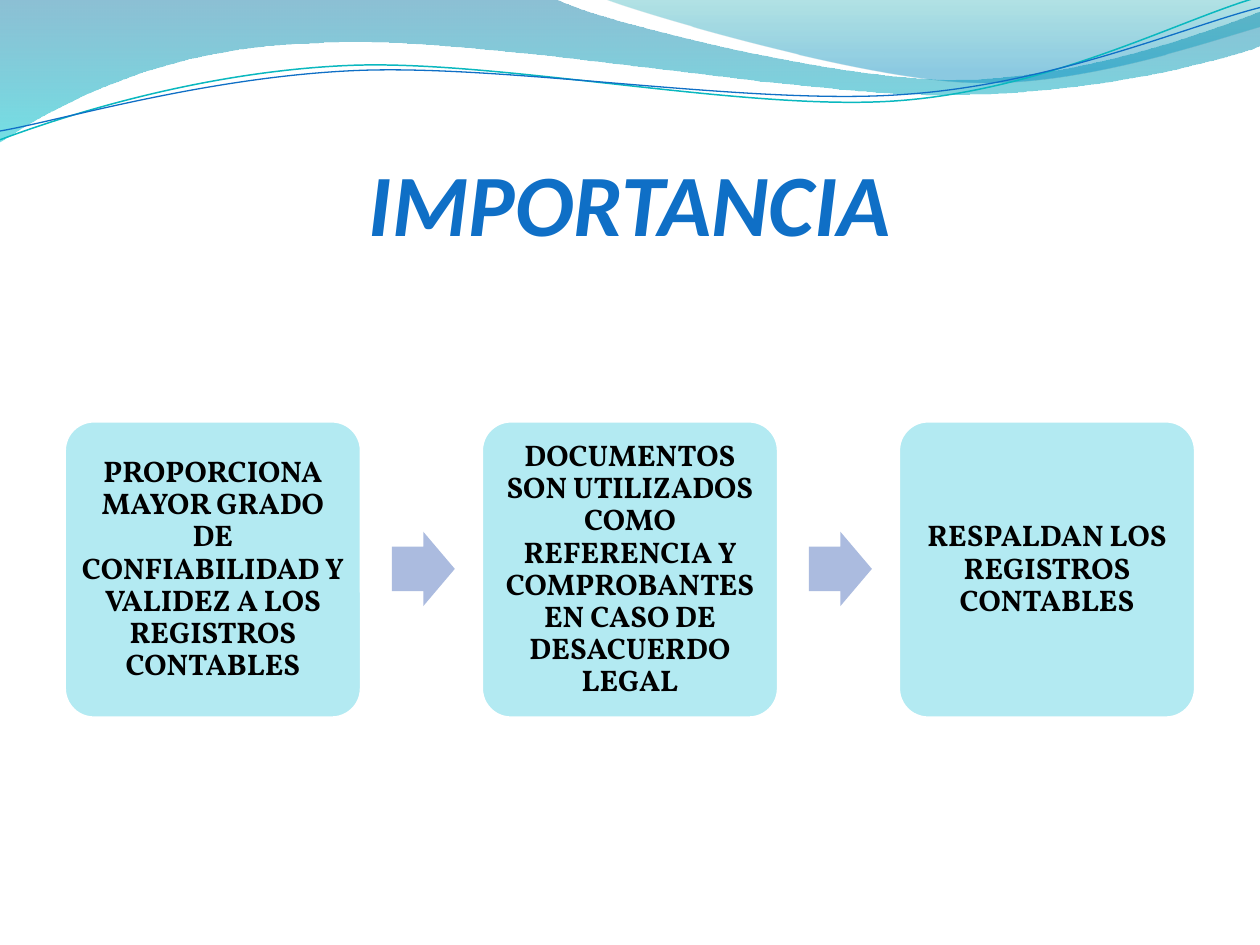
"""Build the "IMPORTANCIA" slide: a wave header and a three-step process."""
from lxml.etree import SubElement
from pptx import Presentation
from pptx.dml.color import RGBColor
from pptx.enum.shapes import MSO_SHAPE as SHAPE
from pptx.enum.text import MSO_ANCHOR as ANCHOR, MSO_AUTO_SIZE as AUTO, PP_ALIGN as ALIGN
from pptx.oxml.ns import qn
from pptx.util import Inches, Pt

BLUE = RGBColor(0x0F, 0x6F, 0xC6)
TEAL = RGBColor(0x0A, 0xB8, 0xBF)
DEEP_BLUE = RGBColor(0x00, 0x74, 0xA1)
CYAN = RGBColor(0x00, 0xC6, 0xCF)
SEA = RGBColor(0x00, 0xA1, 0xA9)
SKY = RGBColor(0x00, 0x8B, 0xBF)
BOX = RGBColor(0xB3, 0xEA, 0xF2)
ARROW = RGBColor(0xAB, 0xBB, 0xDF)
WHITE = RGBColor(0xFF, 0xFF, 0xFF)
BLACK = RGBColor(0x00, 0x00, 0x00)


def add_wave(shapes, start, segments, closed):
    """Draw a freeform from line (2 numbers) and Bezier (6 numbers) segments."""
    points = [(Inches(seg[k]), Inches(seg[k + 1])) for seg in segments for k in range(0, len(seg), 2)]
    builder = shapes.build_freeform(Inches(start[0]), Inches(start[1]))
    builder.add_line_segments(points, close=closed)
    sp = builder.convert_to_shape()
    sp.shadow.inherit = False
    lines = iter(list(sp._element.spPr.iter(qn("a:lnTo"))))
    for seg in segments:
        first = next(lines)
        if len(seg) == 6:
            curve = SubElement(first.getparent(), qn("a:cubicBezTo"))
            first.addprevious(curve)
            for line in (first, next(lines), next(lines)):
                curve.append(line[0])
                line.getparent().remove(line)
    return sp


prs = Presentation()
prs.slide_width, prs.slide_height = Inches(10), Inches(7.5)
s = prs.slides.add_slide(prs.slide_layouts[5])

bands = [
    ((0, 0),
     [(4.4, -0.01), (4.76, 0.17, 6.64, 0.63, 7.58, 0.63), (8.53, 0.63, 9.58, 0.26, 10, 0.09),
      (10.01, 0.36), (9.83, 0.44, 8.7, 0.76, 7.46, 0.75), (6.22, 0.75, 3.82, 0.28, 2.57, 0.34),
      (1.29, 0.36, 0.46, 0.83, -0.01, 1.13)],
     [(0, DEEP_BLUE, 45), (1, CYAN, 55)]),
    ((4.79, -0.01),
     [(5.09, 0.11, 6.82, 0.62, 7.69, 0.65), (8.56, 0.69, 9.61, 0.32, 10, 0.21), (10, 0)],
     [(0, SEA, 30), (0.8, SKY, 45)]),
]
for start, segments, stops in bands:
    sp = add_wave(s.shapes, start, segments, True)
    sp.line.fill.background()
    sp.fill.gradient()
    sp.fill.gradient_angle = 270
    for stop, (position, color, _) in zip(sp.fill.gradient_stops, stops):
        stop.position = position
        stop.color.rgb = color
    for clr, (_, _, opacity) in zip(sp._element.spPr.iter(qn("a:srgbClr")), stops):
        SubElement(clr, qn("a:alpha")).set("val", str(opacity * 1000))

strands = [
    ((0, 1.11), [(0.48, 0.93, 1.58, 0.57, 2.77, 0.52), (3.95, 0.47, 5.93, 0.89, 7.13, 0.8),
                 (8.33, 0.71, 9.38, 0.15, 9.98, -0.02)], TEAL, 0.85),
    ((0, 1.04), [(0.47, 0.96, 1.64, 0.61, 2.83, 0.56), (4.03, 0.51, 5.97, 0.84, 7.17, 0.75),
                 (8.36, 0.67, 9.41, 0.21, 10, 0.06)], BLUE, 0.75),
]
for start, segments, color, width in strands:
    sp = add_wave(s.shapes, start, segments, False)
    sp.fill.background()
    sp.line.color.rgb = color
    sp.line.width = Pt(width)

title = s.shapes.title
title.left, title.top, title.width, title.height = map(Inches, (0.5, 0.77, 9, 1.25))
tf = title.text_frame
tf.text = "IMPORTANCIA"
tf.auto_size = AUTO.NONE
tf.vertical_anchor = ANCHOR.BOTTOM
tf.margin_left = tf.margin_right = tf.margin_bottom = 0
tf.margin_top = Inches(0.05)
p = tf.paragraphs[0]
p.alignment = ALIGN.CENTER
p.font.name, p.font.size = "Calibri", Pt(50)
p.font.bold = p.font.italic = True
p.font.color.rgb = BLUE

steps = [
    "PROPORCIONA MAYOR GRADO DE CONFIABILIDAD Y VALIDEZ A LOS REGISTROS CONTABLES",
    "DOCUMENTOS SON UTILIZADOS COMO REFERENCIA Y COMPROBANTES EN CASO DE DESACUERDO LEGAL",
    "RESPALDAN LOS REGISTROS CONTABLES",
]
left, top, size, pitch = 0.51, 3.34, 2.36, 3.31
for i, text in enumerate(steps):
    x = left + i * pitch
    sp = s.shapes.add_shape(SHAPE.ROUNDED_RECTANGLE, Inches(x), Inches(top), Inches(size), Inches(size))
    sp.adjustments[0] = 0.1
    sp.shadow.inherit = False
    sp.fill.solid()
    sp.fill.fore_color.rgb = BOX
    sp.line.color.rgb = WHITE
    sp.line.width = Pt(2)
    tf = sp.text_frame
    tf.text = text
    tf.word_wrap = True
    tf.vertical_anchor = ANCHOR.MIDDLE
    tf.margin_left = tf.margin_right = tf.margin_top = tf.margin_bottom = Inches(0.07)
    p = tf.paragraphs[0]
    p.alignment = ALIGN.CENTER
    p.line_spacing = 0.9
    p.font.name, p.font.size, p.font.bold = "Vollkorn", Pt(17), True
    p.font.color.rgb = BLACK
    if i < len(steps) - 1:
        sp = s.shapes.add_shape(SHAPE.RIGHT_ARROW, Inches(x + 2.6), Inches(4.22), Inches(0.5), Inches(0.59))
        sp.adjustments[0], sp.adjustments[1] = 0.6, 0.5
        sp.shadow.inherit = False
        sp.fill.solid()
        sp.fill.fore_color.rgb = ARROW
        sp.line.fill.background()

prs.save("out.pptx")
